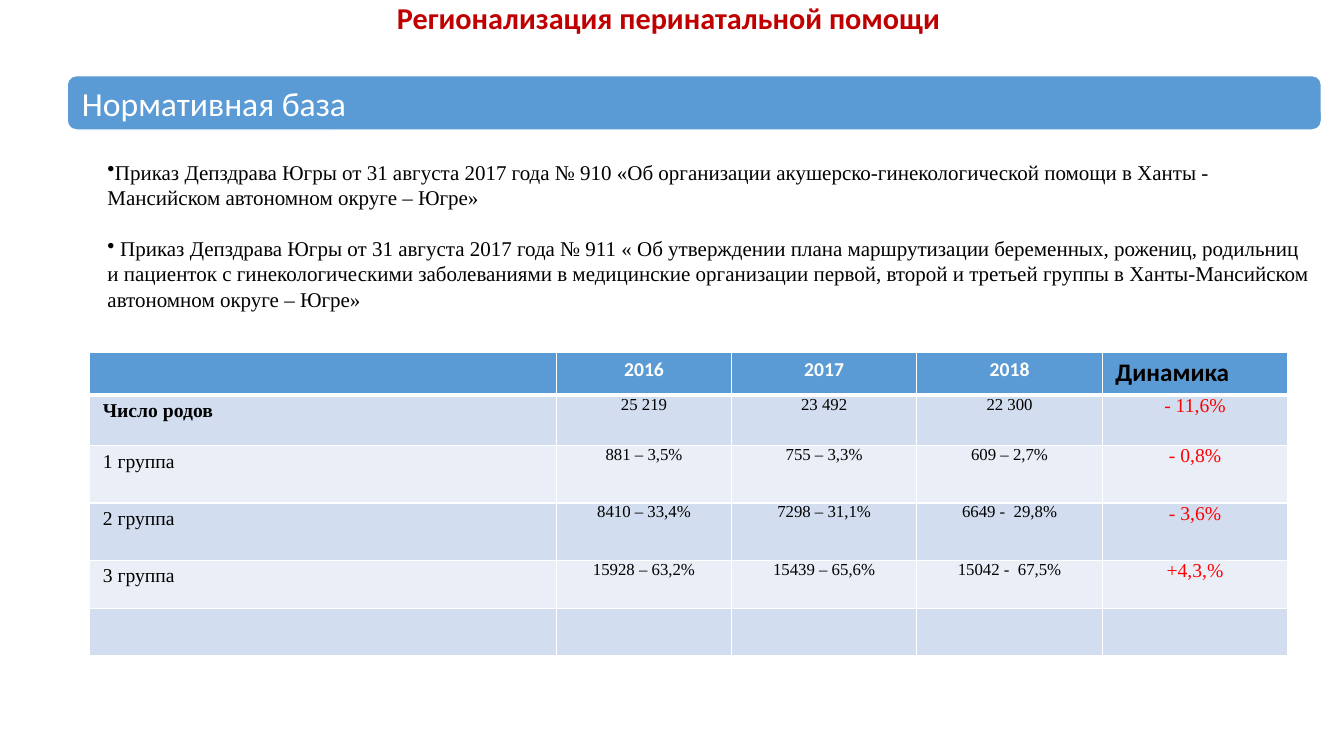
from dataclasses import dataclass

from lxml.etree import SubElement
from pptx import Presentation
from pptx.dml.color import RGBColor
from pptx.enum.shapes import MSO_SHAPE as Shape
from pptx.enum.text import MSO_ANCHOR as Anchor, PP_ALIGN as Align
from pptx.oxml.ns import qn
from pptx.util import Inches, Pt


@dataclass(frozen=True)
class Theme:
    sans: str = "Calibri"
    serif: str = "Times New Roman"
    red: str = "C00000"
    bright_red: str = "FF0000"
    blue: str = "5B9BD5"
    bands: tuple = ("D2DEEF", "EAEFF7")
    white: str = "FFFFFF"
    black: str = "000000"
    title: float = 21.6
    banner: float = 24
    body: float = 15
    leading: float = 18.1
    heading: float = 18
    label: float = 14
    value: float = 12


THEME = Theme()
WIDTH, HEIGHT = Inches(13.33), Inches(7.5)
COLUMN, ROW = WIDTH / 40, HEIGHT / 30

ORDERS = (
    "Приказ Депздрава Югры от 31 августа 2017 года № 910 «Об организации "
    "акушерско-гинекологической помощи в Ханты - Мансийском автономном округе – Югре»",
    " Приказ Депздрава Югры от 31 августа 2017 года № 911 « Об утверждении плана "
    "маршрутизации беременных, рожениц, родильниц и пациенток с гинекологическими "
    "заболеваниями в медицинские организации первой, второй и третьей группы в "
    "Ханты-Мансийском автономном округе – Югре»",
)
BIRTHS = (
    ("", "2016", "2017", "2018", "Динамика"),
    ("Число родов", "25 219", "23 492", "22 300", "- 11,6%"),
    ("1 группа", "881 – 3,5%", "755 – 3,3%", "609 – 2,7%", "- 0,8%"),
    ("2 группа", "8410 – 33,4%", "7298 – 31,1%", "6649 -  29,8%", "- 3,6%"),
    ("3 группа", "15928 – 63,2%", "15439 – 65,6%", "15042 -  67,5%", "+4,3,%"),
    ("", "", "", "", ""),
)
COLUMN_SPANS = (13.9, 5.2, 5.52, 5.52, 5.52)
ROW_SPANS = (1.68, 2, 2.28, 2.28, 1.9, 1.9)


def grid(left, top, columns, rows):
    return [int(n) for n in (left * COLUMN, top * ROW, columns * COLUMN, rows * ROW)]


def color(code):
    return RGBColor.from_string(code)


def add_run(para, text, size, face, shade, bold=False):
    span = para.add_run()
    span.text = text
    span.font.size, span.font.name, span.font.bold = Pt(size), face, bold
    span.font.color.rgb = color(shade)


def set_insets(target, left, top, right, bottom):
    target.margin_left, target.margin_top = Inches(left), Inches(top)
    target.margin_right, target.margin_bottom = Inches(right), Inches(bottom)


def add_box(slide, place, insets, anchor=Anchor.TOP):
    frame = slide.shapes.add_textbox(*place).text_frame
    frame.word_wrap, frame.vertical_anchor = True, anchor
    set_insets(frame, *insets)
    return frame


def add_title(slide, text):
    frame = add_box(slide, grid(2.9, 0, 34, 1.36), (0.1, 0, 0.1, 0), Anchor.MIDDLE)
    para = frame.paragraphs[0]
    para.alignment = Align.CENTER
    add_run(para, text, THEME.title, THEME.sans, THEME.red, True)


def add_banner(slide, text):
    banner = slide.shapes.add_shape(Shape.ROUNDED_RECTANGLE, *grid(2, 3, 37.33, 2.16))
    banner.shadow.inherit = False
    banner.adjustments[0] = 0.17
    banner.fill.solid()
    banner.fill.fore_color.rgb = color(THEME.blue)
    banner.line.color.rgb = color(THEME.white)
    banner.line.width = Pt(1)
    frame = banner.text_frame
    frame.word_wrap, frame.vertical_anchor = True, Anchor.MIDDLE
    set_insets(frame, 0.12, 0.05, 0.12, 0.05)
    para = frame.paragraphs[0]
    para.alignment = Align.LEFT
    add_run(para, text, THEME.banner, THEME.sans, THEME.white)


def add_bullets(slide, items):
    frame = add_box(slide, grid(2, 5.2, 37.33, 8.8), (0.4, 0.28, 0.1, 0.02))
    for index, text in enumerate(items):
        para = frame.add_paragraph() if index else frame.paragraphs[0]
        para.line_spacing = Pt(THEME.leading)
        if index:
            para.space_before = Pt(THEME.leading)
        settings = para._p.get_or_add_pPr()
        settings.set("marL", "0")
        settings.set("indent", "0")
        SubElement(settings, qn("a:buChar"), char="•")
        add_run(para, text, THEME.body, THEME.serif, THEME.black)


def add_borders(cell, bottom):
    """Draw white cell edges; bottom is the width of the lower one in points."""
    settings = cell._tc.get_or_add_tcPr()
    for side, width in (("L", 1), ("R", 1), ("T", 1), ("B", bottom)):
        edge = SubElement(settings, qn(f"a:ln{side}"), w=str(Pt(width)))
        fill = SubElement(edge, qn("a:solidFill"))
        SubElement(fill, qn("a:srgbClr"), val=THEME.white)


def cell_style(row, column, last):
    """Return the size, face, colour and weight of a cell's text."""
    if row == 0:
        if column == last:
            return THEME.heading, THEME.sans, THEME.black, True
        return THEME.label, THEME.sans, THEME.white, True
    if column == 0:
        return THEME.label, THEME.serif, THEME.black, row == 1
    if column == last:
        return THEME.label, THEME.serif, THEME.bright_red, False
    return THEME.value, THEME.serif, THEME.black, False


def add_births_table(slide, records):
    place = grid(2.67, 14, sum(COLUMN_SPANS), sum(ROW_SPANS))
    table = slide.shapes.add_table(len(records), len(COLUMN_SPANS), *place).table
    for column, span in zip(table.columns, COLUMN_SPANS):
        column.width = int(span * COLUMN)
    for row, span in zip(table.rows, ROW_SPANS):
        row.height = int(span * ROW)
    last = len(COLUMN_SPANS) - 1
    for r, record in enumerate(records):
        for c, text in enumerate(record):
            cell = table.cell(r, c)
            is_header = r == 0
            add_borders(cell, 3 if is_header else 1)
            cell.fill.solid()
            cell.fill.fore_color.rgb = color(THEME.blue if is_header else THEME.bands[(r - 1) % 2])
            roomy = is_header or c == 0
            set_insets(cell, *((0.13, 0.05) if roomy else (0.1, 0)) * 2)
            if text:
                para = cell.text_frame.paragraphs[0]
                is_left = c == 0 or (is_header and c == last)
                para.alignment = Align.LEFT if is_left else Align.CENTER
                add_run(para, text, *cell_style(r, c, last))


def main():
    deck = Presentation()
    deck.slide_width, deck.slide_height = WIDTH, HEIGHT
    page = deck.slides.add_slide(deck.slide_layouts[6])
    add_title(page, "Регионализация перинатальной помощи")
    add_banner(page, "Нормативная база")
    add_bullets(page, ORDERS)
    add_births_table(page, BIRTHS)
    deck.save("out.pptx")


if __name__ == "__main__":
    main()
